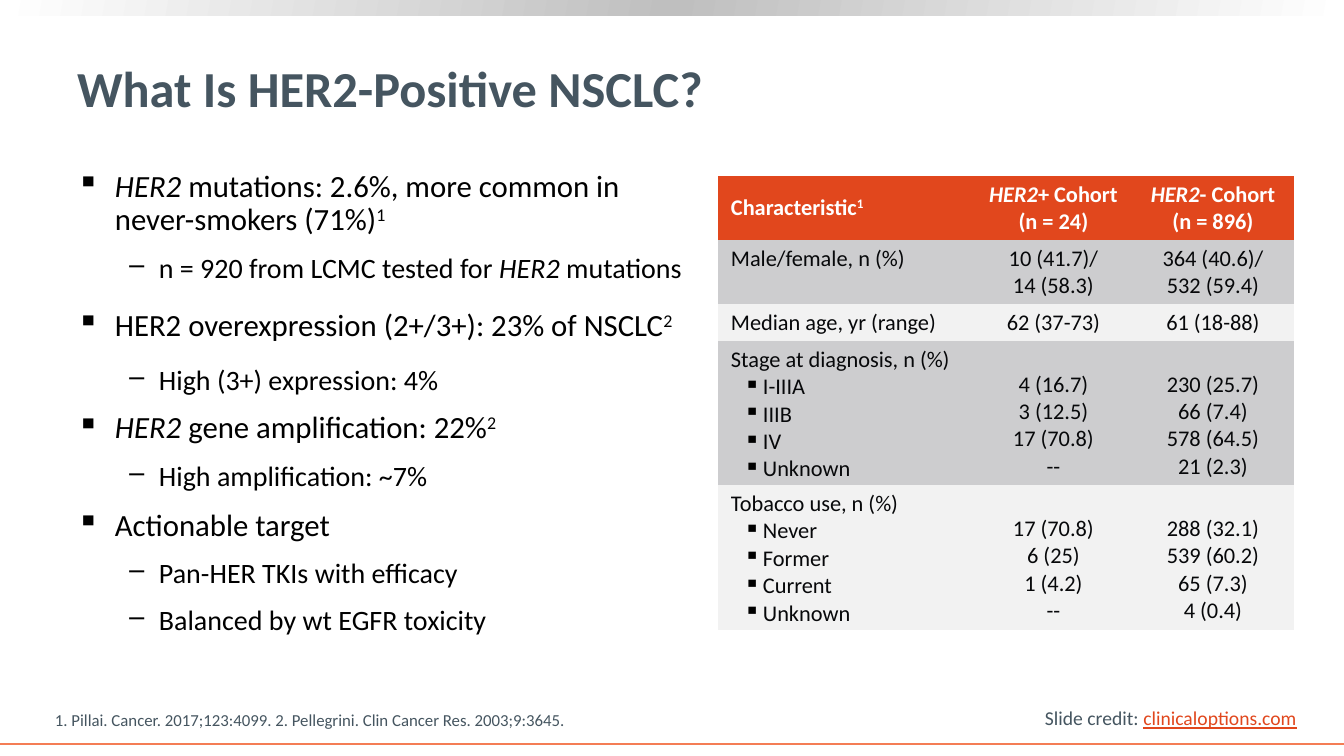
"""Build the HER2-positive NSCLC slide."""
from copy import deepcopy

from lxml.etree import SubElement
from pptx import Presentation
from pptx.dml.color import RGBColor
from pptx.enum.shapes import MSO_CONNECTOR, MSO_SHAPE
from pptx.enum.text import MSO_ANCHOR, PP_ALIGN
from pptx.oxml.ns import qn
from pptx.util import Emu, Pt

TITLE = "What Is HER2-Positive NSCLC?"
POINTS = [
    (0, "*HER2| mutations: 2.6%, more common in\nnever-smokers (71%)|^1", 0, 8),
    (1, "n = 920 from LCMC tested for |*HER2 |mutations", 4, 8),
    (0, "HER2 overexpression (2+/3+): 23% of NSCLC|^2", 10, 7),
    (1, "High (3+) expression: 4%", 10, 7),
    (0, "*HER2 |gene amplification: 22%|^2", 4, 8),
    (1, "High amplification: ~7%", 4, 8),
    (0, "Actionable target", 4, 8),
    (1, "Pan-HER TKIs with efficacy", 4, 8),
    (1, "Balanced by wt EGFR toxicity", 4, 8),
]
LEVELS = [(22, "▪", 38, 38), (20, "‒", 82, 31)]
ROWS = [
    (64, "head", [["Characteristic|^1"], ["*HER2|+ Cohort\n(n = 24)"],
                  ["*HER2|- Cohort\n(n = 896)"]]),
    (64, "dark", [["Male/female, n (%)"], ["10 (41.7)/\n14 (58.3)"],
                  ["364 (40.6)/\n532 (59.4)"]]),
    (37, "pale", [["Median age, yr (range)"], ["62 (37-73)"], ["61 (18-88)"]]),
    (144, "dark", [
        ["Stage at diagnosis, n (%)", "I-IIIA", "IIIB", "IV", "Unknown"],
        ["4 (16.7)", "3 (12.5)", "17 (70.8)", "--"],
        ["230 (25.7)", "66 (7.4)", "578 (64.5)", "21 (2.3)"]]),
    (144, "pale", [
        ["Tobacco use, n (%)", "Never", "Former", "Current", "Unknown"],
        ["17 (70.8)", "6 (25)", "1 (4.2)", "--"],
        ["288 (32.1)", "539 (60.2)", "65 (7.3)", "4 (0.4)"]]),
]
COLS = [257, 157, 162]
NOTE = "1. Pillai. Cancer. 2017;123:4099. 2. Pellegrini. Clin Cancer Res. 2003;9:3645."
CREDIT = ("Slide credit: ", "clinicaloptions.com")
COLORS = {
    "slate": "455560", "head": "E1471D", "dark": "CDCDCF", "pale": "F2F2F2",
    "ink": "07080A", "black": "000000", "white": "FFFFFF", "gray": "BFBFBF",
    "rule": "F47D55",
}
WIDE, HIGH = 1344, 756
SCALE = 12192000 / WIDE
PLAIN = "{2D5ABB26-0587-4C30-8999-92F81FD0307C}"


def px(size):
    return Emu(round(size * SCALE))


def rgb(name):
    return RGBColor.from_string(COLORS[name])


def style(para, size, color, bold=False):
    font = para.font
    font.name, font.size, font.bold = "Calibri", Pt(size), bold
    font.color.rgb = rgb(color)


def bullet(para, mark, left, hang):
    props = para._p.get_or_add_pPr()
    props.set("marL", str(px(left)))
    props.set("indent", str(-px(hang)))
    tint = SubElement(props, qn("a:buClr"))
    SubElement(tint, qn("a:srgbClr")).set("val", COLORS["black"])
    SubElement(props, qn("a:buChar")).set("char", mark)


def write(para, text):
    for part in text.split("|"):
        sign = part[0] if part[0] in "*^" else ""
        for num, line in enumerate(part[len(sign):].split("\n")):
            if num:
                para.add_line_break()
            run = para.add_run()
            run.text = line
            if sign == "*":
                run.font.italic = True
            elif sign == "^":
                run._r.get_or_add_rPr().set("baseline", "30000")


def paras(frame, count):
    return [frame.paragraphs[0]] + [frame.add_paragraph() for _ in range(count - 1)]


def box(slide, *area, wrap=True):
    frame = slide.shapes.add_textbox(*map(px, area)).text_frame
    frame.word_wrap = wrap
    return frame


def add_trim(slide):
    band = slide.shapes.add_shape(MSO_SHAPE.RECTANGLE, 0, 0, px(WIDE), px(16))
    band.shadow.inherit = False
    band.line.fill.background()
    band.fill.gradient()
    band.fill.gradient_angle = 170
    first, last = band.fill.gradient_stops
    first.color.rgb = last.color.rgb = rgb("white")
    first.position, last.position = 0, 1
    stops = band._element.spPr.find(qn("a:gradFill")).find(qn("a:gsLst"))
    stops.insert(1, deepcopy(stops[0]))
    mid = band.fill.gradient_stops[1]
    mid.position, mid.color.rgb = 0.5, rgb("gray")

    rule = slide.shapes.add_connector(
        MSO_CONNECTOR.STRAIGHT, 0, px(744), px(WIDE), px(744))
    rule.line.color.rgb, rule.line.width = rgb("rule"), Pt(1.5)
    SubElement(rule._element.spPr, qn("a:effectLst"))


def add_title(slide):
    title = slide.shapes.title
    title.left, title.top, title.width, title.height = map(px, (67, 26, 1199, 122))
    title.text_frame.text = TITLE
    title.text_frame.vertical_anchor = MSO_ANCHOR.MIDDLE
    para = title.text_frame.paragraphs[0]
    para.alignment = PP_ALIGN.LEFT
    style(para, 36, "slate", True)


def add_points(slide):
    frame = box(slide, 67, 166, 650, 516)
    for para, (level, text, before, after) in zip(paras(frame, len(POINTS)), POINTS):
        size, mark, left, hang = LEVELS[level]
        para.level = level
        para.line_spacing = 0.9
        para.space_before, para.space_after = Pt(before), Pt(after)
        bullet(para, mark, left, hang)
        style(para, size, "black")
        write(para, text)


def fill_cell(cell, col, kind, lines):
    cell.fill.solid()
    cell.fill.fore_color.rgb = rgb(kind)
    cell.margin_left = cell.margin_right = px(13)
    cell.margin_top = cell.margin_bottom = px(5)
    head = kind == "head"
    if len(lines) > 1 and col:
        cell.vertical_anchor = MSO_ANCHOR.BOTTOM
    elif head or col:
        cell.vertical_anchor = MSO_ANCHOR.MIDDLE
    else:
        cell.vertical_anchor = MSO_ANCHOR.TOP
    for num, para in enumerate(paras(cell.text_frame, len(lines))):
        para.alignment = PP_ALIGN.CENTER if col else PP_ALIGN.LEFT
        if num and not col:
            bullet(para, "▪", 32, 19)
        style(para, 16, "white" if head else "ink", head)
        write(para, lines[num])


def add_grid(slide):
    high = sum(row[0] for row in ROWS)
    area = map(px, (718, 176, sum(COLS), high))
    grid = slide.shapes.add_table(len(ROWS), len(COLS), *area).table
    grid._tbl.tblPr.find(qn("a:tableStyleId")).text = PLAIN
    for col, wide in enumerate(COLS):
        grid.columns[col].width = px(wide)
    for row, (tall, kind, cells) in enumerate(ROWS):
        grid.rows[row].height = px(tall)
        for col, lines in enumerate(cells):
            fill_cell(grid.cell(row, col), col, kind, lines)


def add_foot(slide):
    note = box(slide, 45, 705, 866, 30)
    note.vertical_anchor = MSO_ANCHOR.BOTTOM
    style(note.paragraphs[0], 12, "slate")
    write(note.paragraphs[0], NOTE)

    para = box(slide, 1035, 701, 274, 34, wrap=False).paragraphs[0]
    style(para, 14, "slate")
    for text in CREDIT:
        write(para, text)
    site = para.runs[-1].font
    site.color.rgb, site.underline = rgb("head"), True


def main():
    deck = Presentation()
    deck.slide_width, deck.slide_height = px(WIDE), px(HIGH)
    slide = deck.slides.add_slide(deck.slide_layouts[5])
    for add in (add_trim, add_title, add_points, add_grid, add_foot):
        add(slide)
    deck.save("out.pptx")


if __name__ == "__main__":
    main()
